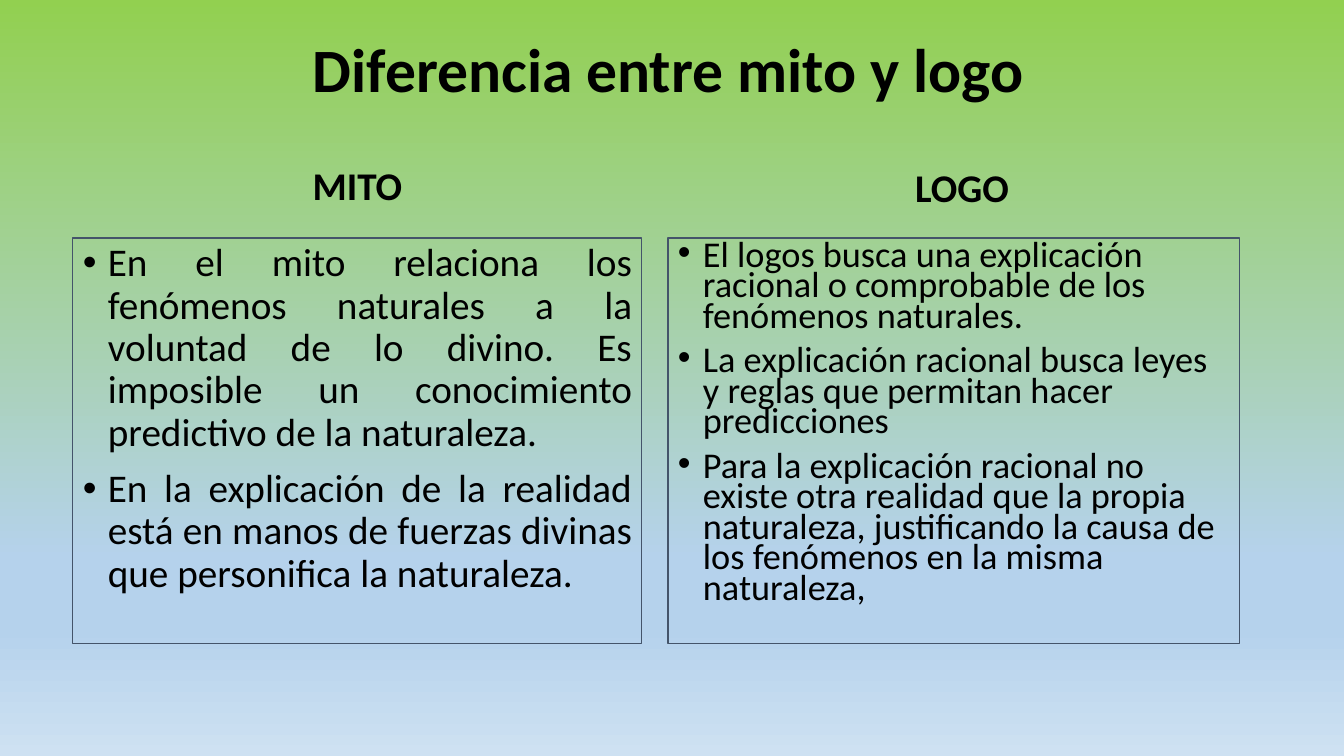
from lxml import etree
from pptx import Presentation
from pptx.dml.color import RGBColor
from pptx.enum.shapes import MSO_SHAPE
from pptx.enum.text import MSO_ANCHOR as ANCHOR, MSO_AUTO_SIZE, PP_ALIGN as ALIGN
from pptx.oxml.ns import qn
from pptx.util import Emu, Pt

FONT = "Calibri"
BLACK, BORDER = "000000", "44546A"
BACKGROUND = [(0, "92D050"), (74, "B5D2EC"), (83, "B5D2EC"), (100, "CEE1F2")]
INDENT = 25

MITO = [
    "En el mito relaciona los fenómenos naturales a la voluntad de lo divino. "
    "Es imposible un conocimiento predictivo de la naturaleza.",
    "En la explicación de la realidad está en manos de fuerzas divinas que "
    "personifica la naturaleza.",
]
LOGO = [
    "El logos busca una explicación racional o comprobable de los fenómenos naturales.",
    "La explicación racional busca leyes y reglas que permitan hacer predicciones",
    "Para la explicación racional no existe otra realidad que la propia naturaleza, "
    "justificando la causa de los fenómenos en la misma naturaleza,",
]


def px(n):
    return Emu(round(n * 914400 / 100.8))


def color(value):
    return RGBColor.from_string(value)


def add_bullet(p):
    pPr = p._p.get_or_add_pPr()
    pPr.set("marL", str(px(INDENT)))
    pPr.set("indent", str(-px(INDENT)))
    etree.SubElement(pPr, qn("a:buFont")).set("typeface", "Arial")
    etree.SubElement(pPr, qn("a:buChar")).set("char", "•")


def write(tf, lines, size, align, anchor, bold=False, spacing=0.9, before=10, bullets=False):
    tf.word_wrap = True
    tf.auto_size = MSO_AUTO_SIZE.NONE
    tf.vertical_anchor = anchor
    for i, line in enumerate(lines):
        p = tf.add_paragraph() if i else tf.paragraphs[0]
        p.text = line
        p.alignment = align
        p.line_spacing = spacing
        p.space_before = Pt(before)
        if bullets:
            add_bullet(p)
        font = p.runs[0].font
        font.name, font.size, font.bold = FONT, Pt(size), bold
        font.color.rgb = color(BLACK)


def paint_background(s):
    fill = s.background.fill
    fill.gradient()
    fill.gradient_angle = 270  # top to bottom
    stops = s.background._cSld.find(".//" + qn("a:gsLst"))
    for stop in list(stops):
        stops.remove(stop)
    for percent, value in BACKGROUND:
        stop = etree.SubElement(stops, qn("a:gs"), pos=str(percent * 1000))
        etree.SubElement(stop, qn("a:srgbClr"), val=value)


def add_title(s, text, x, y, w, h):
    title = s.shapes.title
    title.left, title.top, title.width, title.height = map(px, (x, y, w, h))
    write(title.text_frame, [text], 44, ALIGN.CENTER, ANCHOR.MIDDLE, bold=True, before=0)


def add_column(s, heading, lines, x, y, w, h, heading_dx, heading_dy, size, align, spacing):
    # Heading above the frame
    box = s.shapes.add_textbox(px(x + heading_dx), px(y + heading_dy), px(w), px(45))
    write(box.text_frame, [heading], 28, ALIGN.CENTER, ANCHOR.BOTTOM, bold=True)

    # Framed bullet list
    frame = s.shapes.add_shape(MSO_SHAPE.RECTANGLE, px(x), px(y), px(w), px(h))
    frame.shadow.inherit = False
    frame.fill.background()
    frame.line.color.rgb = color(BORDER)
    frame.line.width = Pt(0.75)
    write(frame.text_frame, lines, size, align, ANCHOR.TOP, spacing=spacing, bullets=True)


def main():
    prs = Presentation()
    prs.slide_width, prs.slide_height = px(1344), px(756)
    s = prs.slides.add_slide(prs.slide_layouts[5])
    paint_background(s)
    add_title(s, "Diferencia entre mito y logo", 89, 0, 1159, 146)
    add_column(s, "MITO", MITO, 73, 238, 569, 406, 0, -69, 28, ALIGN.JUSTIFY, 0.9)
    add_column(s, "LOGO", LOGO, 668, 238, 572, 406, 8, -67, 25.9, ALIGN.LEFT, 0.7)
    prs.save("out.pptx")


if __name__ == "__main__":
    main()
